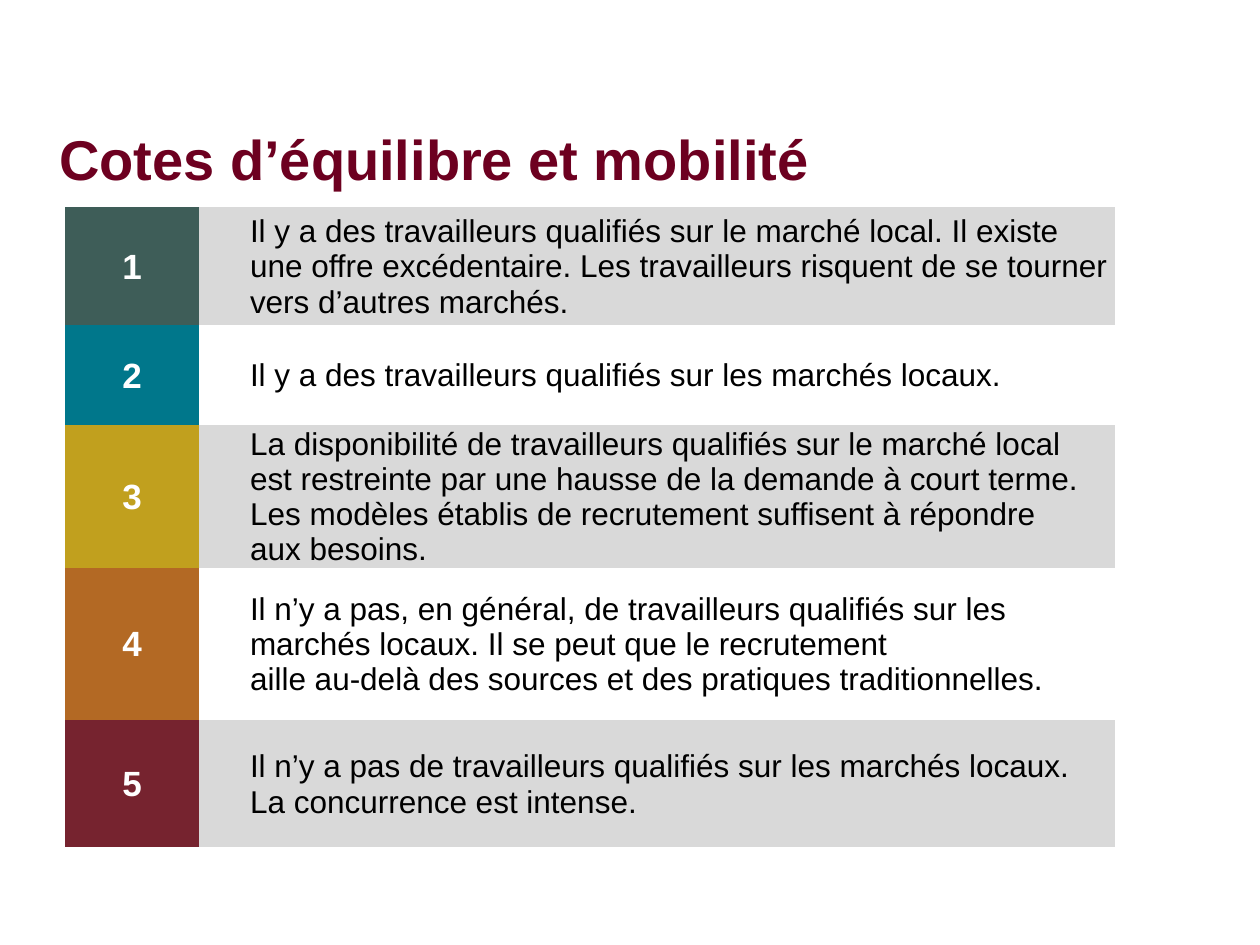
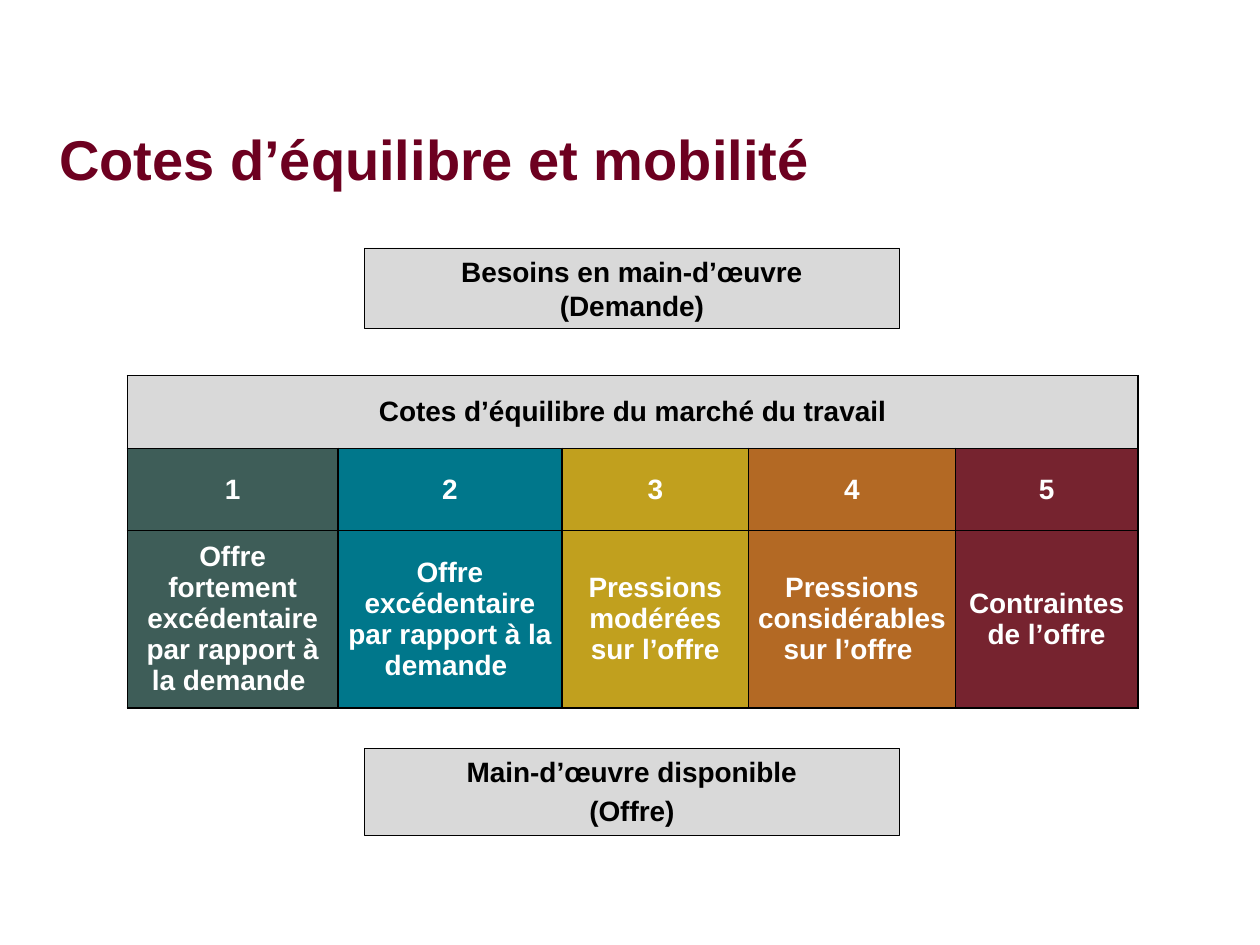
from lxml import etree
from pptx import Presentation
from pptx.dml.color import RGBColor
from pptx.enum.shapes import MSO_SHAPE
from pptx.enum.text import MSO_ANCHOR, PP_ALIGN
from pptx.oxml.ns import qn
from pptx.util import Cm, Pt

RECT = MSO_SHAPE.RECTANGLE
MIDDLE, TOP = MSO_ANCHOR.MIDDLE, MSO_ANCHOR.TOP
LEFT, CENTER = PP_ALIGN.LEFT, PP_ALIGN.CENTER

WHITE = RGBColor(0xFF, 0xFF, 0xFF)
BLACK = RGBColor(0x00, 0x00, 0x00)
GREY = RGBColor(0xD9, 0xD9, 0xD9)
BURGUNDY = RGBColor(0x6D, 0x00, 0x20)
RATING_COLOURS = [
    RGBColor(0x3E, 0x5D, 0x58),
    RGBColor(0x00, 0x77, 0x8B),
    RGBColor(0xC1, 0xA0, 0x1E),
    RGBColor(0xB3, 0x69, 0x24),
    RGBColor(0x76, 0x23, 0x2F),
]
FONT = "Arial"
TITLE = "Cotes d’équilibre et mobilité"
NO_STYLE = "{2D5ABB26-0587-4C30-8999-92F81FD0307C}"


def write(p, text, size=16, color=BLACK, bold=True, align=CENTER, indent=0,
          before=0, after=0):
    if indent:
        p._p.get_or_add_pPr().set("marL", str(Cm(indent)))
    p.text = text
    p.alignment = align
    p.space_before, p.space_after = Pt(before), Pt(after)
    for r in p.runs:
        r.font.name, r.font.size, r.font.bold = FONT, Pt(size), bold
        r.font.color.rgb = color


def add_grid(s, left, top, widths, heights, margin, bottom, border=0):
    """Add an unstyled table; lengths are in cm, border in points."""
    frame = s.shapes.add_table(len(heights), len(widths), Cm(left), Cm(top),
                               Cm(sum(widths)), Cm(sum(heights)))
    table = frame.table
    table.first_row = table.horz_banding = False
    table._tbl.tblPr.find(qn("a:tableStyleId")).text = NO_STYLE
    for column, width in zip(table.columns, widths):
        column.width = Cm(width)
    for row, height in zip(table.rows, heights):
        row.height = Cm(height)
    for cell in table.iter_cells():
        cell.vertical_anchor = MIDDLE
        cell.margin_left = cell.margin_right = cell.margin_top = Cm(margin)
        cell.margin_bottom = Cm(bottom)
        if border:
            tcPr = cell._tc.get_or_add_tcPr()
            for side in ("a:lnL", "a:lnR", "a:lnT", "a:lnB"):
                ln = etree.SubElement(tcPr, qn(side), w=str(Pt(border)))
                fill = etree.SubElement(ln, qn("a:solidFill"))
                etree.SubElement(fill, qn("a:srgbClr"), val=str(BLACK))
    return table


prs = Presentation()
prs.slide_width, prs.slide_height = Cm(25.4), Cm(19.05)

slides = []
for _ in range(2):
    s = prs.slides.add_slide(prs.slide_layouts[5])
    sp = s.shapes.title
    sp.left, sp.top, sp.width, sp.height = Cm(0.94), Cm(1.6), Cm(22.86), Cm(3.17)
    sp.text_frame.vertical_anchor = MIDDLE
    write(sp.text_frame.paragraphs[0], TITLE, size=32, color=BURGUNDY, align=LEFT)
    slides.append(s)
meaning_slide, scale_slide = slides

# Slide 1: what each rating means
meanings = [
    "Il y a des travailleurs qualifiés sur le marché local. Il existe une offre "
    "excédentaire. Les travailleurs risquent de se tourner vers d’autres marchés.",
    "Il y a des travailleurs qualifiés sur les marchés locaux.",
    "La disponibilité de travailleurs qualifiés sur le marché local \n"
    "est restreinte par une hausse de la demande à court terme. "
    "Les modèles établis de recrutement suffisent à répondre \naux besoins.",
    "Il n’y a pas, en général, de travailleurs qualifiés sur les marchés locaux. "
    "Il se peut que le recrutement \n"
    "aille au-delà des sources et des pratiques traditionnelles.",
    "Il n’y a pas de travailleurs qualifiés sur les marchés locaux. \n"
    "La concurrence est intense.",
]
table = add_grid(meaning_slide, 1.32, 4.17, [2.69, 18.47],
                 [2.39, 2.01, 2.87, 3.07, 2.57], margin=0.03, bottom=0)
for i, (meaning, colour) in enumerate(zip(meanings, RATING_COLOURS)):
    rating_cell, meaning_cell = table.cell(i, 0), table.cell(i, 1)
    rating_cell.fill.solid()
    rating_cell.fill.fore_color.rgb = colour
    write(rating_cell.text_frame.paragraphs[0], str(i + 1), size=20, color=WHITE)
    if i % 2 == 0:
        meaning_cell.fill.solid()
        meaning_cell.fill.fore_color.rgb = GREY
    else:
        meaning_cell.fill.background()
    write(meaning_cell.text_frame.paragraphs[0], meaning, size=18, bold=False,
          align=LEFT, indent=1)

# Slide 2: the rating scale between demand and supply
labels = [
    "Offre fortement excédentaire par rapport à la demande ",
    "Offre excédentaire par rapport à la demande ",
    "Pressions modérées sur l’offre",
    "Pressions considérables sur l’offre ",
    "Contraintes de l’offre",
]
boxes = [
    (5.0, 1.63, MIDDLE, 0, ["Besoins en main-d’œuvre", "(Demande)"]),
    (15.09, 1.75, TOP, 3.2, ["Main-d’œuvre disponible", "(Offre)"]),
]
for top, height, anchor, gap, lines in boxes:
    sp = scale_slide.shapes.add_shape(RECT, Cm(7.34), Cm(top), Cm(10.8), Cm(height))
    sp.shadow.inherit = False
    sp.fill.solid()
    sp.fill.fore_color.rgb = GREY
    sp.line.color.rgb = BLACK
    sp.line.width = Pt(0.5)
    tf = sp.text_frame
    tf.word_wrap = True
    tf.vertical_anchor = anchor
    for i, line in enumerate(lines):
        p = tf.add_paragraph() if i else tf.paragraphs[0]
        write(p, line, before=gap if i else 0)

table = add_grid(scale_slide, 2.57, 7.57, [4.24, 4.52, 3.76, 4.17, 3.68],
                 [1.47, 1.65, 3.58], margin=0.1, bottom=0.1, border=1)
header = table.cell(0, 0)
header.merge(table.cell(0, 4))
header.fill.solid()
header.fill.fore_color.rgb = GREY
write(header.text_frame.paragraphs[0], "Cotes d’équilibre du marché du travail")
for i, (label, colour) in enumerate(zip(labels, RATING_COLOURS)):
    for row, text, after in ((1, str(i + 1), 0), (2, label, 8)):
        cell = table.cell(row, i)
        cell.fill.solid()
        cell.fill.fore_color.rgb = colour
        write(cell.text_frame.paragraphs[0], text, color=WHITE, after=after)

prs.save("out.pptx")
